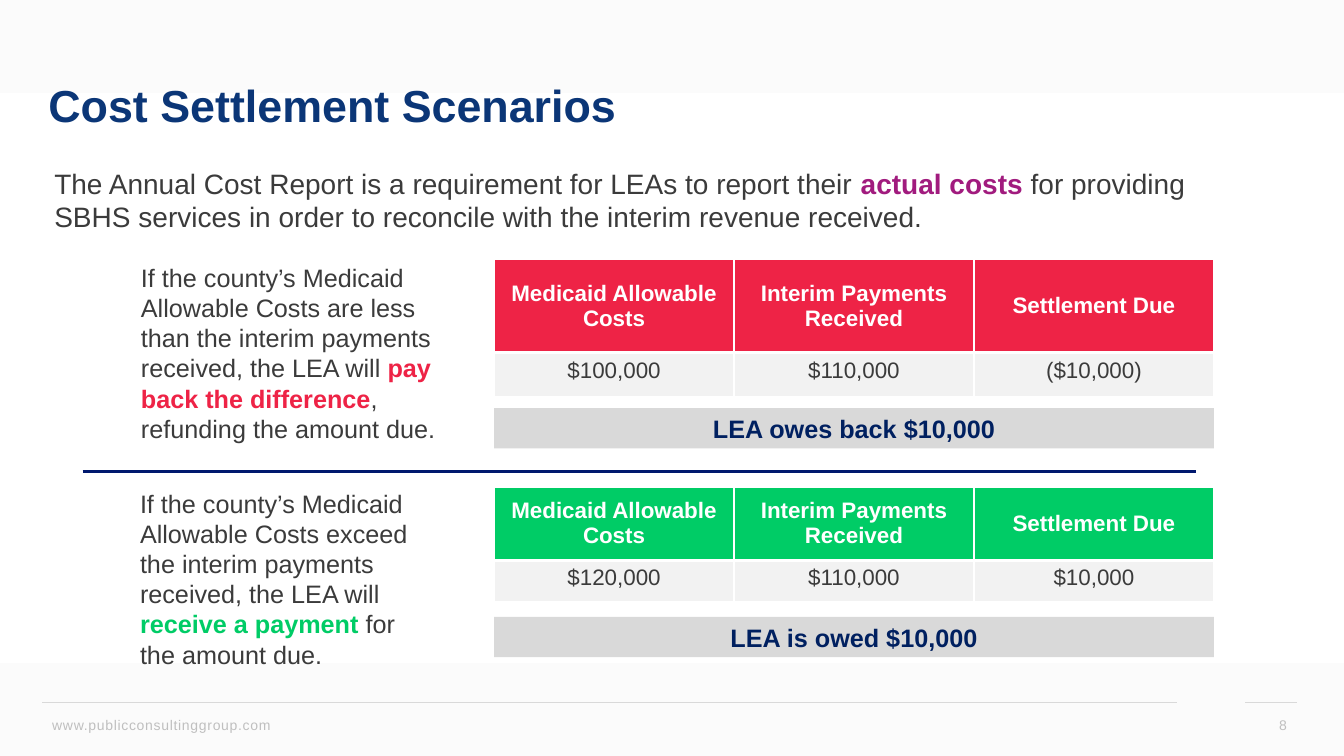
from lxml.etree import SubElement
from pptx import Presentation
from pptx.dml.color import RGBColor
from pptx.enum.shapes import MSO_CONNECTOR as Conn, MSO_SHAPE as Shape
from pptx.enum.text import MSO_ANCHOR as Anchor, PP_ALIGN as Align
from pptx.oxml.ns import qn
from pptx.util import Inches, Pt

FONT = "Arial"
HEX = {
    "navy": "0B3677", "text": "3B3B3B", "plum": "A11B7E", "red": "EE2346",
    "green": "00CC66", "rule": "00186E", "result": "002060", "bar": "D9D9D9",
    "cell": "F2F2F2", "foot": "BFBFBF", "white": "FFFFFF", "haze": "FBFBFB",
}
TITLE = "Cost Settlement Scenarios"
INTRO = [
    ("The Annual Cost Report is a requirement for LEAs to report their ", None),
    ("actual costs ", "plum"),
    ("for providing SBHS services in order to reconcile with the interim "
     "revenue received.", None),
]
HEADS = ["Medicaid Allowable Costs", "Interim Payments Received", "Settlement Due"]
CASES = [
    {
        "color": "red",
        "note": [
            ("If the county’s Medicaid Allowable Costs are less than the interim "
             "payments received, the LEA will ", None),
            ("pay back the difference", "red"),
            (", refunding the amount due.", None),
        ],
        "box": (1.3, 2.55, 3.26, 1.92),
        "values": ["$100,000", "$110,000", "($10,000)"],
        "top": 2.57, "rows": (0.93, 0.44),
        "result": "LEA owes back $10,000", "bar": 4.05,
    },
    {
        "color": "green",
        "note": [
            ("If the county’s Medicaid Allowable Costs exceed the interim "
             "payments received, the LEA will ", None),
            ("receive a payment ", "green"),
            ("for the amount due.", None),
        ],
        "box": (1.29, 4.79, 2.99, 2.22),
        "values": ["$120,000", "$110,000", "$10,000"],
        "top": 4.83, "rows": (0.73, 0.42),
        "result": "LEA is owed $10,000", "bar": 6.12,
    },
]
LEFT, WIDTH = 4.9, 7.14
HAZE = [(0, 270), (5.65, 90)]
RULES = [
    (0.42, 11.67, 6.97, "bar", 0.5),
    (12.35, 12.86, 6.97, "bar", 0.5),
    (0.82, 11.86, 4.68, "rule", 2.25),
]
FOOTER = [
    ("www.publicconsultinggroup.com", (0.42, 7.05, 3.87, 0.28), Align.LEFT),
    ("8", (12.44, 6.99, 0.42, 0.4), Align.RIGHT),
]


def rgb(name):
    return RGBColor.from_string(HEX[name])


def style(font, size, color, bold=False):
    font.name, font.size, font.bold = FONT, Pt(size), bold
    font.color.rgb = rgb(color)


def write(frame, text, size, color, bold=False, align=Align.LEFT):
    frame.word_wrap = True
    para = frame.paragraphs[0]
    para.text, para.alignment = text, align
    style(para.font, size, color, bold)
    return para


def add_text(slide, box):
    return slide.shapes.add_textbox(*map(Inches, box)).text_frame


def add_rich(slide, box, parts, size):
    """Add a text box whose coloured parts are bold."""
    para = write(add_text(slide, box), "", size, "text")
    for text, color in parts:
        run = para.add_run()
        run.text = text
        if color:
            style(run.font, size, color, True)


def add_rect(slide, box):
    rect = slide.shapes.add_shape(Shape.RECTANGLE, *map(Inches, box))
    rect.shadow.inherit = False
    rect.line.fill.background()
    return rect


def add_rule(slide, start, end, y, color, width):
    line = slide.shapes.add_connector(
        Conn.STRAIGHT, Inches(start), Inches(y), Inches(end), Inches(y))
    line.line.color.rgb, line.line.width = rgb(color), Pt(width)
    SubElement(line._element.spPr, qn("a:effectLst"))


def fill_cell(cell, text, fill, color, bold, anchor):
    write(cell.text_frame, text, 16, color, bold, Align.CENTER)
    cell.vertical_anchor = anchor
    props = cell._tc.get_or_add_tcPr()
    for side in ("lnL", "lnR", "lnT", "lnB"):
        edge = SubElement(props, qn("a:" + side), w=str(Pt(2.25)))
        SubElement(SubElement(edge, qn("a:solidFill")), qn("a:srgbClr"), val=HEX["white"])
    cell.fill.solid()
    cell.fill.fore_color.rgb = rgb(fill)


def add_case(slide, case):
    add_rich(slide, case["box"], case["note"], 18)
    box = (LEFT, case["top"], WIDTH, sum(case["rows"]))
    table = slide.shapes.add_table(2, len(HEADS), *map(Inches, box)).table
    table.horz_banding = False
    for row, high in zip(table.rows, case["rows"]):
        row.height = Inches(high)
    for col, (head, value) in enumerate(zip(HEADS, case["values"])):
        table.columns[col].width = Inches(WIDTH / len(HEADS))
        fill_cell(table.cell(0, col), head, case["color"], "white", True, Anchor.MIDDLE)
        fill_cell(table.cell(1, col), value, "cell", "text", False, Anchor.TOP)
    bar = add_rect(slide, (LEFT, case["bar"], WIDTH, 0.4))
    bar.fill.solid()
    bar.fill.fore_color.rgb = rgb("bar")
    bar.text_frame.vertical_anchor = Anchor.MIDDLE
    write(bar.text_frame, case["result"], 18, "result", True, Align.CENTER)


def main():
    prs = Presentation()
    prs.slide_width, prs.slide_height = Inches(13.33), Inches(7.5)
    slide = prs.slides.add_slide(prs.slide_layouts[5])

    for top, angle in HAZE:
        fill = add_rect(slide, (0, top, 13.33, 1.85)).fill
        fill.gradient()
        fill.gradient_angle = angle
        for stop, color in zip(fill.gradient_stops, ("haze", "white")):
            stop.color.rgb = rgb(color)

    title = slide.shapes.title
    title.left, title.top, title.width, title.height = map(Inches, (0.38, 0.4, 12.52, 1.35))
    title.text_frame.vertical_anchor = Anchor.MIDDLE
    write(title.text_frame, TITLE, 32, "navy", True).line_spacing = 0.9
    # Keep the title in front of the background haze
    slide.shapes._spTree.append(title._element)

    add_rich(slide, (0.44, 1.6, 12.03, 0.78), INTRO, 20)
    for rule in RULES:
        add_rule(slide, *rule)
    for case in CASES:
        add_case(slide, case)
    for text, box, align in FOOTER:
        frame = add_text(slide, box)
        frame.vertical_anchor = Anchor.MIDDLE
        para = write(frame, text, 10, "foot", align=align)
        para.runs[0]._r.get_or_add_rPr().set("spc", "50")
    prs.save("out.pptx")


if __name__ == "__main__":
    main()
